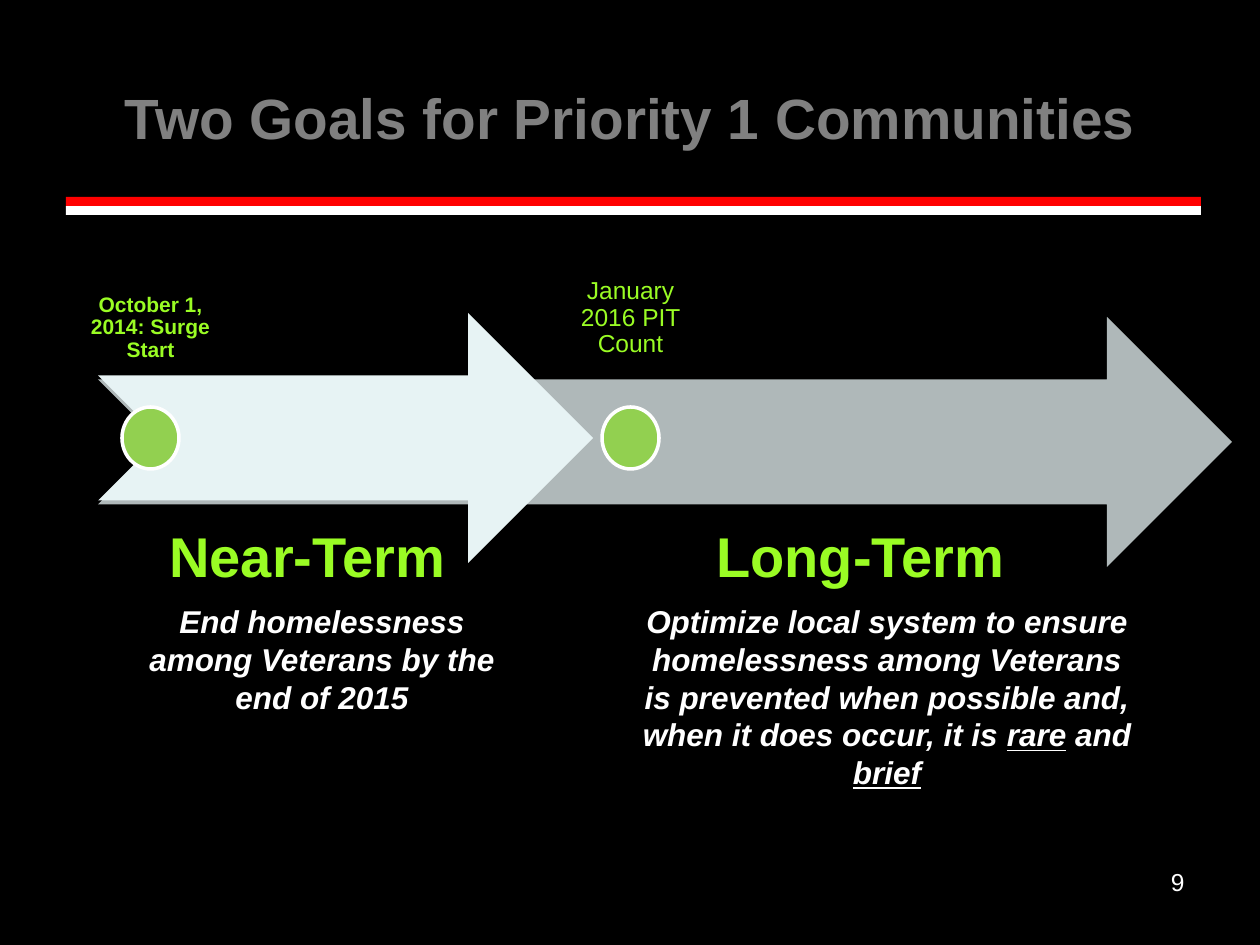
from lxml import etree
from pptx import Presentation
from pptx.dml.color import RGBColor
from pptx.enum.shapes import MSO_SHAPE as SHAPE
from pptx.enum.text import MSO_ANCHOR as ANCHOR, MSO_AUTO_SIZE as AUTO_SIZE, PP_ALIGN as ALIGN
from pptx.oxml.ns import qn
from pptx.util import Emu, Inches, Pt

PX = Inches(1) / 126

BLACK = RGBColor(0x00, 0x00, 0x00)
WHITE = RGBColor(0xFF, 0xFF, 0xFF)
RED = RGBColor(0xFF, 0x00, 0x00)
GREY = RGBColor(0x80, 0x80, 0x80)
PALE_BLUE = RGBColor(0xE7, 0xF3, 0xF4)
LIME = RGBColor(0x9A, 0xFC, 0x24)
GREEN = RGBColor(0x92, 0xD0, 0x50)

presentation = Presentation()
presentation.slide_width = Emu(round(1260 * PX))
presentation.slide_height = Emu(round(945 * PX))
slide = presentation.slides.add_slide(presentation.slide_layouts[5])
slide.background.fill.solid()
slide.background.fill.fore_color.rgb = BLACK


def add_text(text, box, size, color, bold=False, italic=False, align=ALIGN.CENTER,
             anchor=ANCHOR.TOP, wrap=True, spacing=None, inset=6, shape=None):
    """Write text in a box (left, top, width, height); _marked_ words are underlined."""
    left, top, width, height = [Emu(round(value * PX)) for value in box]
    if shape is None:
        shape = slide.shapes.add_textbox(left, top, width, height)
    shape.left, shape.top, shape.width, shape.height = left, top, width, height
    frame = shape.text_frame
    frame.auto_size = AUTO_SIZE.NONE
    frame.word_wrap = wrap
    frame.vertical_anchor = anchor
    frame.margin_top = frame.margin_bottom = Emu(round(inset * PX))
    paragraph = frame.paragraphs[0]
    paragraph.alignment = align
    if spacing:
        paragraph.line_spacing = spacing
    for index, part in enumerate(text.split("_")):
        if not part:
            continue
        run = paragraph.add_run()
        run.text = part
        font = run.font
        font.name, font.size, font.color.rgb = "Arial", Pt(size), color
        font.bold, font.italic = bold, italic
        if index % 2:
            font.underline = True


def add_filled_shape(kind, box, fill, line=None):
    shape = slide.shapes.add_shape(kind, *[Emu(round(value * PX)) for value in box])
    shape.shadow.inherit = False
    shape.fill.solid()
    shape.fill.fore_color.rgb = fill
    if line:
        shape.line.color.rgb = line
        shape.line.width = Pt(2)
    else:
        shape.line.fill.background()
    return shape


# Title with its two-colour rule
for row, color in enumerate((RED, WHITE)):
    add_filled_shape(SHAPE.RECTANGLE, (66, 197 + 9 * row, 1135, 9), color)
add_text("Two Goals for Priority 1 Communities", (63, 38, 1134, 157), 32.4, GREY,
         bold=True, anchor=ANCHOR.MIDDLE, shape=slide.shapes.title)

# Timeline arrows: translucent long term behind, near term in front
long_arrow = add_filled_shape(SHAPE.NOTCHED_RIGHT_ARROW, (98, 317, 1134, 250), PALE_BLUE)
fill_color = long_arrow.fill._xPr.find(qn("a:solidFill"))[0]
etree.SubElement(fill_color, qn("a:alpha")).set("val", "76000")
add_filled_shape(SHAPE.NOTCHED_RIGHT_ARROW, (98, 313, 495, 250), PALE_BLUE)

# Milestones: label above, dot on the arrow
milestones = [
    ("October 1, 2014: Surge Start", (74, 246, 153, 129), 12, True, 122),
    ("January 2016 PIT Count", (558, 262, 145, 109), 14, False, 602),
]
for label, box, size, bold, dot_left in milestones:
    add_text(label, box, size, LIME, bold=bold, anchor=ANCHOR.BOTTOM, spacing=0.9, inset=13)
    add_filled_shape(SHAPE.OVAL, (dot_left, 407, 57, 62), GREEN, line=WHITE)

# Goals: heading and description
goals = [
    ("Near-Term", (157, 515, 304, 81),
     "End homelessness among Veterans by the end of 2015", (122, 596, 400, 127)),
    ("Long-Term", (704, 515, 316, 81),
     "Optimize local system to ensure homelessness among Veterans is prevented when "
     "possible and, when it does occur, it is _rare_ and _brief_", (630, 596, 514, 204)),
]
for heading, heading_box, description, description_box in goals:
    add_text(heading, heading_box, 32, LIME, bold=True, align=ALIGN.LEFT, wrap=False)
    add_text(description, description_box, 18, WHITE, bold=True, italic=True)

# Page number
add_text("9", (903, 861, 294, 66), 14, WHITE, align=ALIGN.RIGHT)

presentation.save("out.pptx")
